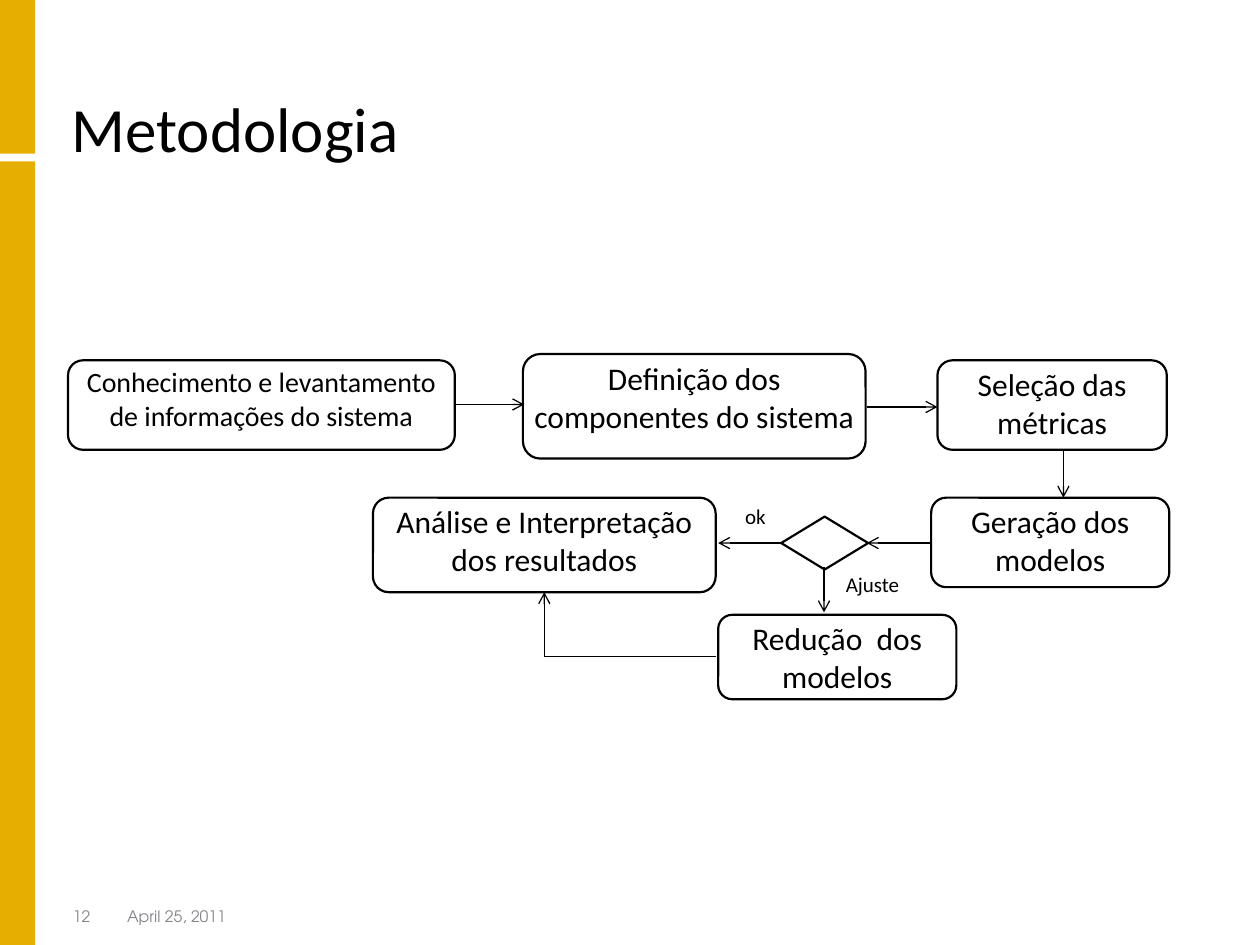
from lxml.etree import SubElement
from pptx import Presentation
from pptx.dml.color import RGBColor
from pptx.enum.shapes import MSO_CONNECTOR, MSO_SHAPE
from pptx.enum.text import MSO_ANCHOR, PP_ALIGN
from pptx.oxml.ns import qn
from pptx.util import Inches, Pt

BLACK, WHITE, GOLD, GRAY = "000000", "FFFFFF", "E6AF00", "848589"
BODY_FONT, FOOTER_FONT = "Calibri", "TeX Gyre Adventor"

# Side bars: left, top, width, height
BARS = [(0, 1.28, 0.28, 6.22), (0, 0, 0.28, 1.22)]

# Process steps: text, size, place
STEPS = [
    ("Conhecimento e levantamento de informações do sistema", 16, (0.54, 2.86, 3.07, 0.71)),
    ("Definição dos componentes do sistema", 18, (4.15, 2.81, 2.72, 0.83)),
    ("Seleção das métricas", 18, (7.44, 2.86, 1.82, 0.71)),
    ("Geração dos modelos", 18, (7.39, 3.95, 1.89, 0.71)),
    ("Análise e Interpretação dos resultados", 18, (2.96, 3.95, 2.72, 0.75)),
    ("Redução  dos modelos", 18, (5.7, 4.88, 1.89, 0.67)),
]
DECISION = (6.2, 4.1, 0.69, 0.42)

# Connectors: start, end, arrowhead
FLOWS = [
    ((3.6, 3.21), (4.16, 3.21), True),
    ((6.88, 3.23), (7.44, 3.23), True),
    ((8.44, 3.57), (8.44, 3.95), True),
    ((7.38, 4.31), (6.88, 4.31), True),
    ((6.2, 4.31), (5.7, 4.31), True),
    ((6.54, 4.5), (6.54, 4.86), True),
    ((5.68, 5.21), (4.32, 5.21), False),
    ((4.32, 5.21), (4.32, 4.7), True),
]

# Labels: text, size, font, colour, alignment, anchor, place
CENTER, LEFT = PP_ALIGN.CENTER, PP_ALIGN.LEFT
TOP, BOTTOM = MSO_ANCHOR.TOP, MSO_ANCHOR.BOTTOM
LABELS = [
    ("Metodologia", 36, BODY_FONT, BLACK, LEFT, BOTTOM, (0.47, 0.12, 9.02, 1.25)),
    ("12", 9, FOOTER_FONT, GRAY, LEFT, BOTTOM, (0.48, 7.16, 0.42, 0.24)),
    ("April 25, 2011", 9, FOOTER_FONT, GRAY, LEFT, BOTTOM, (0.91, 7.16, 1.22, 0.24)),
    ("ok", 12, BODY_FONT, BLACK, CENTER, TOP, (5.8, 3.95, 0.39, 0.3)),
    ("Ajuste", 12, BODY_FONT, BLACK, CENTER, TOP, (6.51, 4.49, 0.83, 0.3)),
]


def color(value):
    return RGBColor.from_string(value)


def inches(values):
    return [Inches(value) for value in values]


def write(shape, text, size, font, ink, align, anchor):
    frame = shape.text_frame
    frame.word_wrap = True
    frame.vertical_anchor = anchor
    para = frame.paragraphs[0]
    para.alignment = align
    para.line_spacing = 0.9 if size == 36 else 1.0
    span = para.add_run()
    span.text = text
    span.font.size = Pt(size)
    span.font.name = font
    span.font.color.rgb = color(ink)


def add_figure(page, kind, place, fill, outlined=True):
    shape = page.shapes.add_shape(kind, *inches(place))
    shape.shadow.inherit = False
    shape.fill.solid()
    shape.fill.fore_color.rgb = color(fill)
    if outlined:
        shape.line.color.rgb = color(BLACK)
        shape.line.width = Pt(1.25)
    else:
        shape.line.fill.background()
    return shape


def add_step(page, text, size, place):
    box = add_figure(page, MSO_SHAPE.ROUNDED_RECTANGLE, place, WHITE)
    frame = box.text_frame
    frame.margin_left = frame.margin_right = frame.margin_top = frame.margin_bottom = 0
    write(box, text, size, BODY_FONT, BLACK, CENTER, TOP)


def add_flow(page, start, end, arrow):
    flow = page.shapes.add_connector(MSO_CONNECTOR.STRAIGHT, *inches(start + end))
    flow.line.color.rgb = color(BLACK)
    flow.line.width = Pt(0.75)
    if arrow:
        SubElement(flow.line._get_or_add_ln(), qn("a:tailEnd"), type="arrow")
    SubElement(flow._element.spPr, qn("a:effectLst"))


def main():
    deck = Presentation()
    deck.slide_width, deck.slide_height = Inches(10), Inches(7.5)
    page = deck.slides.add_slide(deck.slide_layouts[6])

    for place in BARS:
        add_figure(page, MSO_SHAPE.RECTANGLE, place, GOLD, outlined=False)

    # Flowchart
    for step in STEPS:
        add_step(page, *step)
    add_figure(page, MSO_SHAPE.FLOWCHART_DECISION, DECISION, WHITE)
    for flow in FLOWS:
        add_flow(page, *flow)

    # Title, footer and branch labels
    for *style, place in LABELS:
        write(page.shapes.add_textbox(*inches(place)), *style)

    deck.save("out.pptx")


if __name__ == "__main__":
    main()
